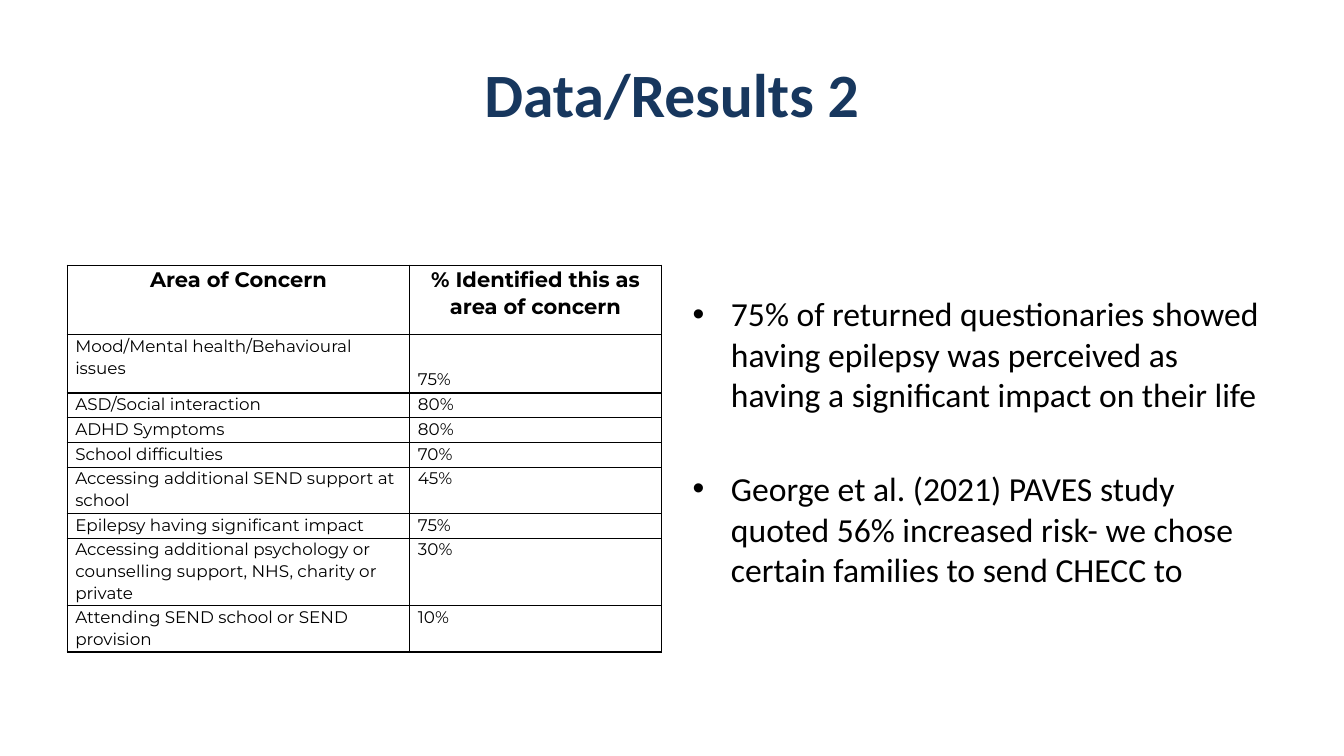
import dataclasses

import lxml.etree
import pptx
import pptx.dml.color
import pptx.enum.text
import pptx.oxml.ns
import pptx.util

WIDE = pptx.util.Inches(13.33)
HIGH = pptx.util.Inches(7.5)
ALIGN = pptx.enum.text.PP_ALIGN
ANCHOR = pptx.enum.text.MSO_ANCHOR
qn = pptx.oxml.ns.qn


@dataclasses.dataclass(frozen=True)
class Theme:
    navy: str = "17375E"
    black: str = "000000"
    sans: str = "Calibri"
    grid: str = "Montserrat"
    title: int = 44
    body: int = 24
    head: int = 15
    cell: int = 12


THEME = Theme()

HEADS = ("Area of Concern", "% Identified this as area of concern")
AREAS = (
    ("Mood/Mental health/Behavioural issues", "75%", 1.93),
    ("ASD/Social interaction", "80%", 0.82),
    ("ADHD Symptoms", "80%", 0.82),
    ("School difficulties", "70%", 0.82),
    ("Accessing additional SEND support at school", "45%", 1.53),
    ("Epilepsy having significant impact", "75%", 0.82),
    ("Accessing additional psychology or counselling support, NHS, charity or private", "30%", 2.23),
    ("Attending SEND school or SEND provision", "10%", 1.53),
)
POINTS = (
    "75% of returned questionaries showed having epilepsy was perceived as having a significant impact on their life",
    "George et al. (2021) PAVES study quoted 56% increased risk- we chose certain families to send CHECC to",
)


def col(count):
    return round(WIDE * count / 20)


def row(count):
    return round(HIGH * count / 25)


def style(para, face, size, tint, bold=False):
    font = para.font
    font.name = face
    font.size = pptx.util.Pt(size)
    font.bold = bold
    font.color.rgb = pptx.dml.color.RGBColor.from_string(tint)


def add_box(slide, left, top, wide, high):
    box = slide.shapes.add_textbox(col(left), row(top), col(wide), row(high))
    box.text_frame.word_wrap = True
    return box.text_frame


def add_title(slide, text):
    frame = add_box(slide, 1, 1, 18, 4.17)
    frame.vertical_anchor = ANCHOR.MIDDLE
    para = frame.paragraphs[0]
    para.text = text
    para.alignment = ALIGN.CENTER
    para.space_after = pptx.util.Pt(6)
    style(para, THEME.sans, THEME.title, THEME.navy, True)


def add_points(slide, texts):
    frame = add_box(slide, 10.16, 7.93, 8.84, 14.4)
    frame.margin_top = row(1.77)
    for index, text in enumerate(texts):
        para = frame.paragraphs[0] if index == 0 else frame.add_paragraph()
        para.text = text
        if index:
            para.space_before = pptx.util.Pt(38.5)
        props = para._p.get_or_add_pPr()
        indent = pptx.util.Inches(0.38)
        props.set("marL", str(indent))
        props.set("indent", str(-indent))
        lxml.etree.SubElement(props, qn("a:buFont"), typeface="Arial")
        lxml.etree.SubElement(props, qn("a:buChar"), char="•")
        style(para, THEME.sans, THEME.body, THEME.black)


def add_edges(cell):
    props = cell._tc.get_or_add_tcPr()
    for side in ("L", "R", "T", "B"):
        line = lxml.etree.SubElement(props, qn("a:ln" + side), w=str(pptx.util.Pt(1)))
        fill = lxml.etree.SubElement(line, qn("a:solidFill"))
        lxml.etree.SubElement(fill, qn("a:srgbClr"), val=THEME.black)


def fill_cell(cell, text, head):
    add_edges(cell)
    cell.fill.background()
    cell.margin_left = cell.margin_right = pptx.util.Inches(0.08)
    cell.margin_top = cell.margin_bottom = 0
    para = cell.text_frame.paragraphs[0]
    para.text = text
    para.alignment = ALIGN.CENTER if head else ALIGN.LEFT
    para.line_spacing = 1.06
    para.space_after = pptx.util.Pt(8)
    style(para, THEME.grid, THEME.head if head else THEME.cell, THEME.black, head)


def add_areas(slide):
    lines = ((*HEADS, 2.3), *AREAS)
    total = sum(high for *texts, high in lines)
    shape = slide.shapes.add_table(len(lines), 2, col(1), row(8.77), col(8.84), row(total))
    table = shape.table
    table.first_row = table.horz_banding = False
    for column, wide in zip(table.columns, (5.1, 3.74)):
        column.width = col(wide)
    for index, (*texts, high) in enumerate(lines):
        table.rows[index].height = row(high)
        for place, text in enumerate(texts):
            fill_cell(table.cell(index, place), text, index == 0)
    table.cell(1, 1).margin_top = row(1.1)


def main():
    deck = pptx.Presentation()
    deck.slide_width, deck.slide_height = WIDE, HIGH
    slide = deck.slides.add_slide(deck.slide_layouts[6])
    add_title(slide, "Data/Results 2")
    add_points(slide, POINTS)
    add_areas(slide)
    deck.save("out.pptx")


if __name__ == "__main__":
    main()
